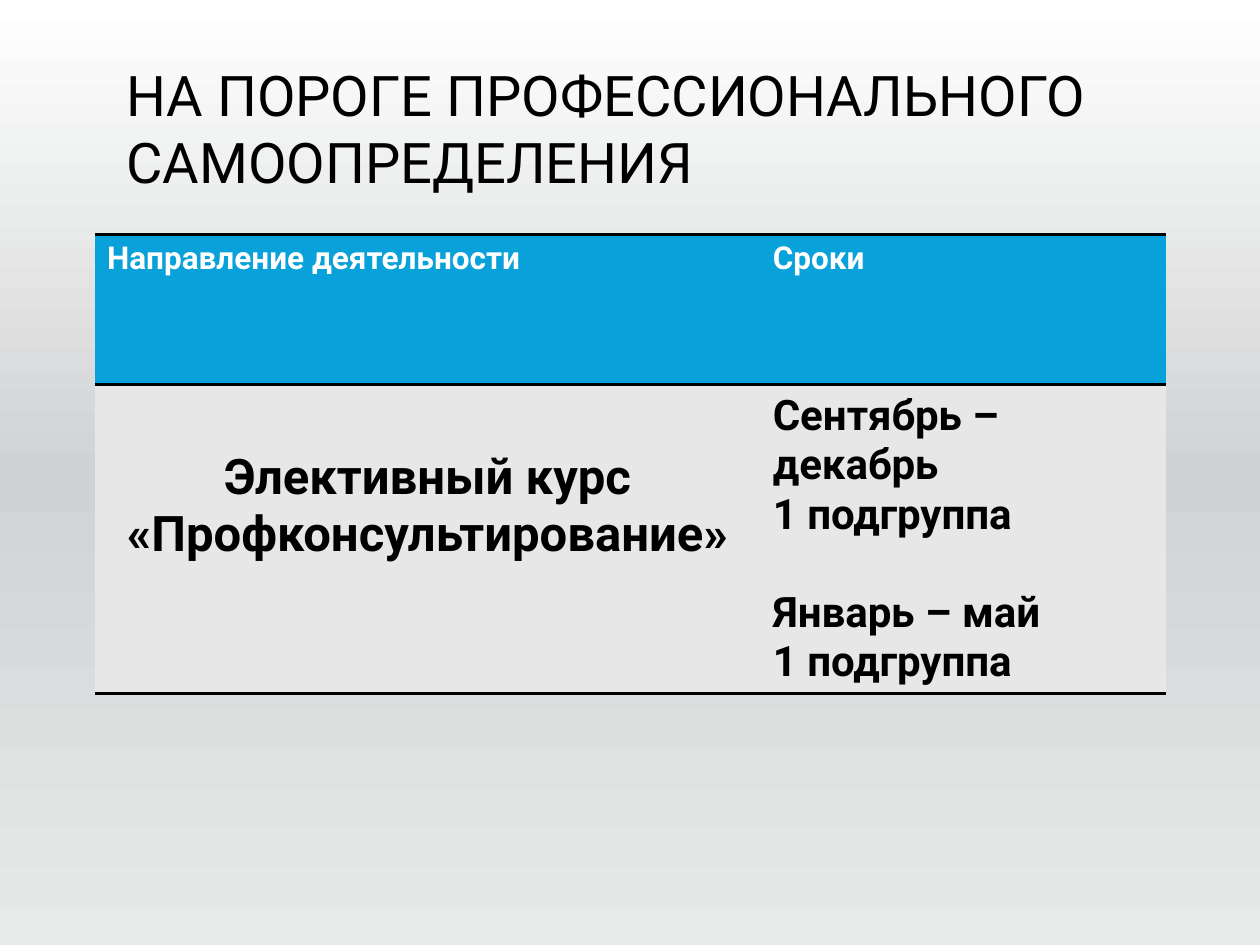
from copy import deepcopy
from pptx import Presentation
from pptx.dml.color import RGBColor as RGB
from pptx.enum.text import MSO_ANCHOR as Anchor, PP_ALIGN as Align
from pptx.oxml import parse_xml
from pptx.oxml.ns import nsdecls, qn
from pptx.util import Pt

HEX = {"ink": "000000", "white": "FFFFFF", "blue": "08A1D9", "pale": "E7E7E7",
       "mid": "D1D2D3", "foot": "E8E9E9"}
FONT = "Roboto"


def style(para, size, color, bold):
    for run in para.runs:
        font = run.font
        font.name, font.size, font.bold = FONT, Pt(size), bold
        font.color.rgb = RGB.from_string(HEX[color])


def border(cell, side):
    cell._tc.get_or_add_tcPr().insert(0, parse_xml(
        f'<a:{side} {nsdecls("a")} w="{Pt(2)}"><a:solidFill>'
        f'<a:srgbClr val="{HEX["ink"]}"/></a:solidFill></a:{side}>'))


deck = Presentation()
deck.slide_width, deck.slide_height = Pt(720), Pt(540)
slide = deck.slides.add_slide(deck.slide_layouts[5])

back = slide.background.fill
back.gradient()
back.gradient_angle = 270
stops = slide._element.find(".//" + qn("a:gsLst"))
stops.append(deepcopy(stops[0]))
for stop, place, name in zip(back.gradient_stops, (0, 0.5, 1), ("white", "mid", "foot")):
    stop.position = place
    stop.color.rgb = RGB.from_string(HEX[name])

title = slide.shapes.title
title.left, title.top, title.width, title.height = Pt(65), Pt(29), Pt(592), Pt(88)
title.text_frame.text = "НА ПОРОГЕ ПРОФЕССИОНАЛЬНОГО САМООПРЕДЕЛЕНИЯ"
title.text_frame.word_wrap = True
title.text_frame.vertical_anchor = Anchor.MIDDLE
title.text_frame.paragraphs[0].alignment = Align.LEFT
style(title.text_frame.paragraphs[0], 32, "ink", False)

frame = slide.shapes.add_table(2, 2, Pt(54), Pt(134), Pt(612.6), Pt(262))
table = frame.table
frame._element.find(".//" + qn("a:tableStyleId")).text = "{2D5ABB26-0587-4C30-8999-92F81FD0307C}"
for col, width in zip(table.columns, (380.4, 232.2)):
    col.width = Pt(width)
for row, height in zip(table.rows, (86, 176)):
    row.height = Pt(height)

cells = [
    (0, 0, "Направление деятельности", 18, "white", "blue"),
    (0, 1, "Сроки", 18, "white", "blue"),
    (1, 0, "Элективный курс «Профконсультирование»", 28, "ink", "pale"),
    (1, 1, "Сентябрь –декабрь\n1 подгруппа\nЯнварь – май\n1 подгруппа", 24, "ink", "pale"),
]
for row, col, text, size, color, fill in cells:
    cell = table.cell(row, col)
    cell.text_frame.text = text
    for para in cell.text_frame.paragraphs:
        style(para, size, color, True)
    cell.fill.solid()
    cell.fill.fore_color.rgb = RGB.from_string(HEX[fill])
    border(cell, "lnB")
    border(cell, "lnT")

course, dates = table.cell(1, 0), table.cell(1, 1)
course.margin_top = Pt(36.5)
course.text_frame.paragraphs[0].alignment = Align.CENTER
dates.text_frame.paragraphs[2].space_before = Pt(28)

deck.save("out.pptx")
